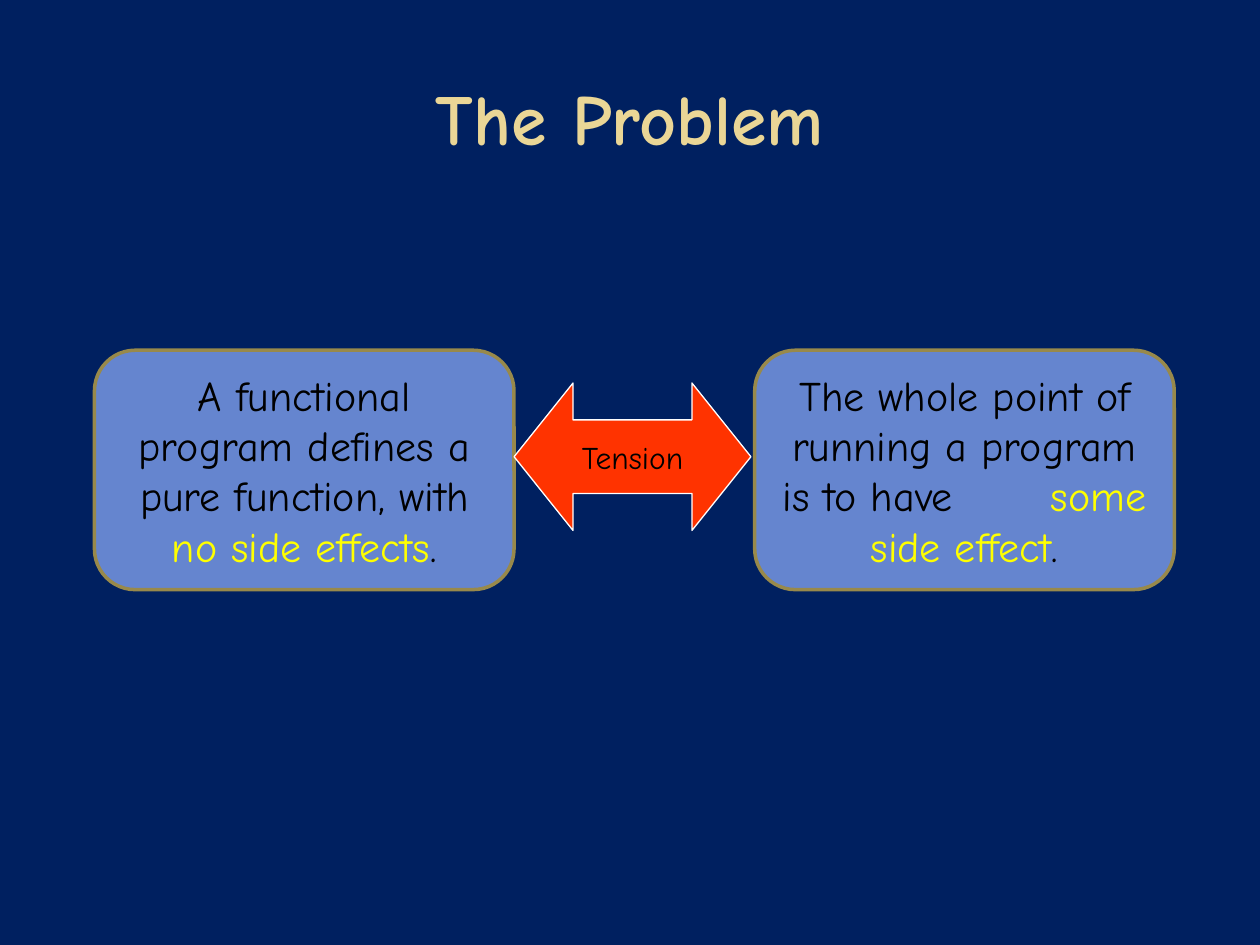
from pptx import Presentation
from pptx.dml.color import RGBColor
from pptx.enum.shapes import MSO_SHAPE
from pptx.enum.text import MSO_ANCHOR, PP_ALIGN
from pptx.util import Inches, Pt

CALLOUT = MSO_SHAPE.ROUNDED_RECTANGULAR_CALLOUT
DOUBLE_ARROW = MSO_SHAPE.LEFT_RIGHT_ARROW
MIDDLE = MSO_ANCHOR.MIDDLE
CENTER = PP_ALIGN.CENTER

NAVY = RGBColor(0x00, 0x20, 0x60)
CREAM = RGBColor(0xEA, 0xD6, 0x96)
BLUE = RGBColor(0x65, 0x85, 0xCF)
GOLD = RGBColor(0x98, 0x89, 0x4B)
RED = RGBColor(0xFF, 0x33, 0x00)
WHITE = RGBColor(0xFF, 0xFF, 0xFF)
BLACK = RGBColor(0x00, 0x00, 0x00)
YELLOW = RGBColor(0xFF, 0xFF, 0x00)

FONT = "Comic Neue"


def add_text(para, text, size=24, color=BLACK, bold=False, spacing=0):
    """Add a span of text; spacing is extra space per character in points."""
    span = para.add_run()
    span.text = text
    span.font.name = FONT
    span.font.size = Pt(size)
    span.font.bold = bold
    span.font.color.rgb = color
    if spacing:
        span.font._element.set("spc", str(spacing * 100))


def centered_paragraph(shape, wrap=True):
    frame = shape.text_frame
    frame.word_wrap = wrap
    frame.vertical_anchor = MIDDLE
    para = frame.paragraphs[0]
    para.alignment = CENTER
    return para


def place(shape, box):
    shape.left, shape.top, shape.width, shape.height = map(Inches, box)


def add_filled_shape(page, kind, box, adjustments, fill, line, line_width):
    shape = page.shapes.add_shape(kind, *map(Inches, box))
    for index, value in enumerate(adjustments):
        shape.adjustments[index] = value
    shape.shadow.inherit = False
    shape.fill.solid()
    shape.fill.fore_color.rgb = fill
    shape.line.color.rgb = line
    shape.line.width = Pt(line_width)
    return shape


def add_title(page, box, text):
    title = page.shapes.title
    place(title, box)
    add_text(centered_paragraph(title), text, size=41, color=CREAM, bold=True)


def add_statement(page, box, lead, highlight, gap=0):
    """Draw a callout whose closing words are highlighted after a gap."""
    callout = add_filled_shape(page, CALLOUT, box, (-0.24, 0.5, 0.17),
                               BLUE, GOLD, 2)
    para = centered_paragraph(callout)
    add_text(para, lead)
    add_text(para, " ", spacing=gap)
    add_text(para, highlight, color=YELLOW)
    add_text(para, ".")


def add_tension(page, box, text):
    arrow = add_filled_shape(page, DOUBLE_ARROW, box, (0.5, 0.4),
                             RED, WHITE, 0.75)
    add_text(centered_paragraph(arrow, wrap=False), text, size=18)


def main():
    deck = Presentation()
    deck.slide_width, deck.slide_height = Inches(10), Inches(7.5)
    page = deck.slides.add_slide(deck.slide_layouts[5])
    page.background.fill.solid()
    page.background.fill.fore_color.rgb = NAVY

    add_title(page, (0.5, 0.3, 9, 1.25), "The Problem")

    # Two opposing statements
    top, width, height = 2.78, 3.33, 1.9
    add_statement(page, (0.75, top, width, height),
                  "A functional program defines a pure function, with",
                  "no side effects")
    add_statement(page, (5.99, top, width, height),
                  "The whole point of running a program is to have",
                  "some side effect", gap=48)

    # Arrow between them
    add_tension(page, (4.08, 3.04, 1.88, 1.17), "Tension")

    deck.save("out.pptx")


if __name__ == "__main__":
    main()
